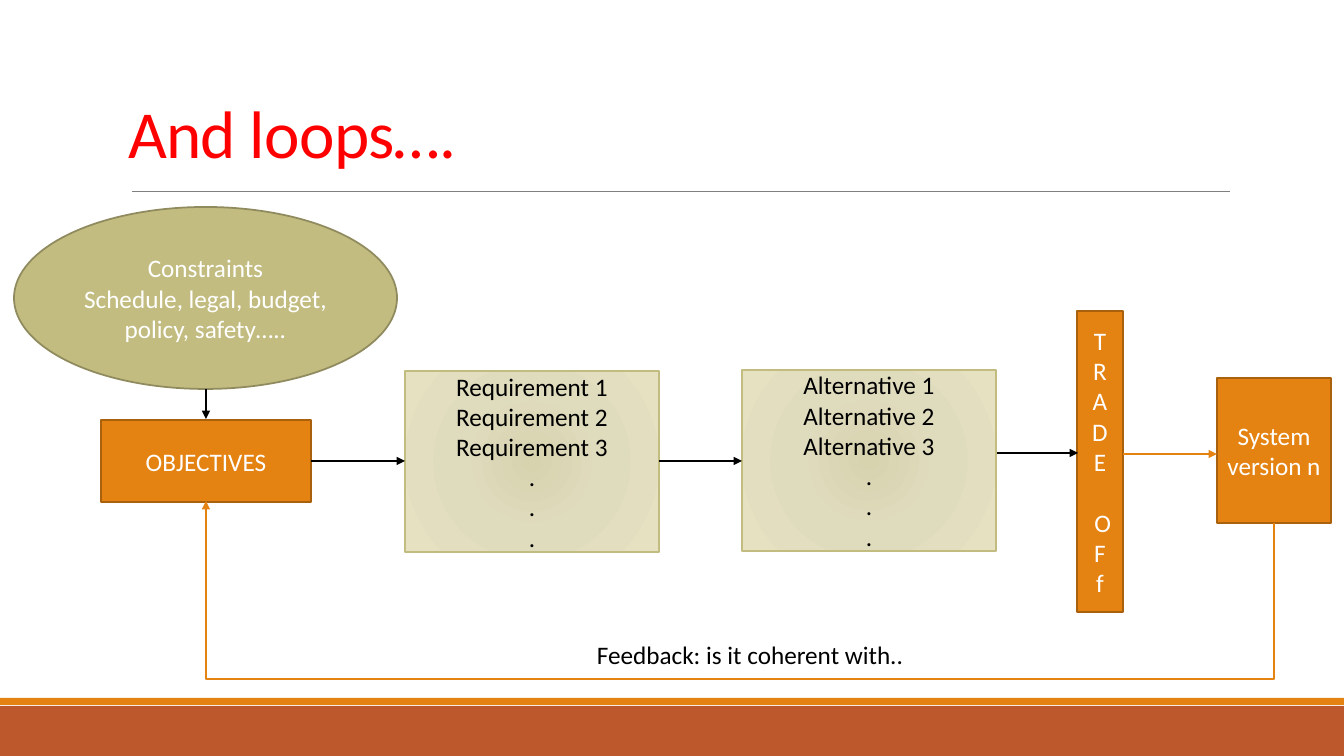
"""Build a slide showing a design process that loops back to its objectives."""
import pptx
import pptx.dml.color
import pptx.enum.shapes
import pptx.enum.text
import pptx.oxml
import pptx.oxml.ns
import pptx.util

PX = 914400 / 100.8
FONT = "Calibri"
COLORS = {
    "white": "FFFFFF", "black": "000000", "red": "FF0000", "gray": "808080",
    "rust": "BD582C", "orange": "E48312", "dark orange": "A9610D",
    "olive": "C2BC80", "dark olive": "908B5F",
}
GLOW = ((0, "D7D3AF"), (45, "DFDBBD"), (100, "E5E1C1"))
SHAPES = pptx.enum.shapes.MSO_SHAPE
CONNECTORS = pptx.enum.shapes.MSO_CONNECTOR
ALIGN = pptx.enum.text.PP_ALIGN
ANCHOR = pptx.enum.text.MSO_ANCHOR


def px(*lengths):
    return [pptx.util.Emu(round(length * PX)) for length in lengths]


def color(name):
    return pptx.dml.color.RGBColor.from_string(COLORS[name])


def add_xml(parent, tag, **attributes):
    child = pptx.oxml.parse_xml(f"<a:{tag} {pptx.oxml.ns.nsdecls('a')}/>")
    for key, value in attributes.items():
        child.set(key, str(value))
    parent.append(child)
    return child


def style_paragraph(para, text, ink, size=18, align=ALIGN.CENTER):
    para.text = text
    para.alignment = align
    para.font.name = FONT
    para.font.size = pptx.util.Pt(size)
    para.font.color.rgb = color(ink)


def fill_with_glow(shape):
    shape.fill.gradient()
    gradient = shape._element.spPr.find(pptx.oxml.ns.qn("a:gradFill"))
    for child in list(gradient):
        gradient.remove(child)
    stops = add_xml(gradient, "gsLst")
    for percent, tint in GLOW:
        stop = add_xml(stops, "gs", pos=percent * 1000)
        add_xml(stop, "srgbClr", val=tint)
    circle = add_xml(gradient, "path", path="circle")
    add_xml(circle, "fillToRect", l=50000, t=50000, r=50000, b=50000)


def add_box(page, place, fill, outline=None, lines=(), ink="white",
            kind=SHAPES.RECTANGLE, width=1.25):
    box = page.shapes.add_shape(kind, *px(*place))
    box.shadow.inherit = False
    if fill == "glow":
        fill_with_glow(box)
    else:
        box.fill.solid()
        box.fill.fore_color.rgb = color(fill)
    if outline:
        box.line.color.rgb = color(outline)
        box.line.width = pptx.util.Pt(width)
    else:
        box.line.fill.background()
    frame = box.text_frame
    frame.word_wrap = True
    frame.vertical_anchor = ANCHOR.MIDDLE
    for index, text in enumerate(lines):
        para = frame.add_paragraph() if index else frame.paragraphs[0]
        style_paragraph(para, text, ink)
    return box


def add_line(page, ends, ink="black", width=1, arrow=True,
             kind=CONNECTORS.STRAIGHT):
    line = page.shapes.add_connector(kind, *px(*ends))
    line.line.color.rgb = color(ink)
    line.line.width = pptx.util.Pt(width)
    properties = line._element.spPr
    if arrow:
        outline = properties.find(pptx.oxml.ns.qn("a:ln"))
        add_xml(outline, "tailEnd", type="triangle")
    add_xml(properties, "effectLst")
    return line


def add_feedback_loop(page, start, end, bottom):
    """Draw an elbow arrow that leaves downwards and comes back up."""
    (start_x, start_y), (end_x, end_y) = start, end
    middle_x, middle_y = (start_x + end_x) // 2, (start_y + end_y) // 2
    half_drop, half_span = (start_y - end_y) // 2, (start_x - end_x) // 2
    ends = (middle_x + half_drop, middle_y - half_span,
            middle_x - half_drop, middle_y + half_span)
    loop = add_line(page, ends, "orange", kind=CONNECTORS.ELBOW)
    properties = loop._element.spPr
    properties.find(pptx.oxml.ns.qn("a:xfrm")).set("rot", str(90 * 60000))
    guides = properties.find(".//" + pptx.oxml.ns.qn("a:avLst"))
    bend = round(-100000 * (bottom - start_y) / (start_y - end_y))
    add_xml(guides, "gd", name="adj1", fmla=f"val {bend}")


def set_title(page, text):
    title = page.shapes.title
    title.left, title.top, title.width, title.height = px(118, 17, 1109, 160)
    frame = title.text_frame
    frame.word_wrap = True
    frame.auto_size = pptx.enum.text.MSO_AUTO_SIZE.NONE
    frame.vertical_anchor = ANCHOR.BOTTOM
    para = frame.paragraphs[0]
    style_paragraph(para, text, "red", 48, ALIGN.LEFT)
    para.line_spacing = 0.85
    para.runs[0].font._element.set("spc", "-50")


def add_label(page, place, text):
    label = page.shapes.add_textbox(*px(*place))
    frame = label.text_frame
    frame.word_wrap = False
    frame.auto_size = pptx.enum.text.MSO_AUTO_SIZE.SHAPE_TO_FIT_TEXT
    style_paragraph(frame.paragraphs[0], text, "black", align=ALIGN.LEFT)


def main():
    deck = pptx.Presentation()
    deck.slide_width, deck.slide_height = px(1344, 756)
    page = deck.slides.add_slide(deck.slide_layouts[5])

    add_box(page, (0, 706, 1344, 50), "rust")
    add_box(page, (0, 698, 1344, 7), "orange")
    add_line(page, (132, 191, 1230, 191), "gray", 0.5, arrow=False)
    set_title(page, "And loops….")

    add_box(page, (14, 207, 383, 182), "olive", "dark olive",
            ("Constraints", "Schedule, legal, budget, policy, safety….."),
            kind=SHAPES.OVAL)
    add_box(page, (101, 420, 210, 82), "orange", "dark orange", ("OBJECTIVES",))
    for left, top, name in ((405, 371, "Requirement"), (742, 370, "Alternative")):
        lines = [f"{name} {number}" for number in (1, 2, 3)] + ["."] * 3
        add_box(page, (left, top, 254, 181), "glow", "olive", lines, "black",
                width=1)
    trade_off = add_box(page, (1077, 311, 46, 301), "orange", "dark orange",
                        (*"TRADE", " O", *"Ff"))
    trade_off.text_frame.paragraphs[5].space_before = pptx.util.Pt(22)
    add_box(page, (1217, 378, 114, 145), "orange", "dark orange",
            ("System version n",))

    for ends in ((206, 389, 206, 419), (311, 461, 405, 461),
                 (659, 461, 742, 461), (997, 453, 1078, 453)):
        add_line(page, ends)
    add_line(page, (1123, 454, 1217, 454), "orange")
    add_feedback_loop(page, (1274, 523), (206, 501), 679)
    add_label(page, (587, 634, 331, 40), "Feedback: is it coherent with..")

    deck.save("out.pptx")


if __name__ == "__main__":
    main()
